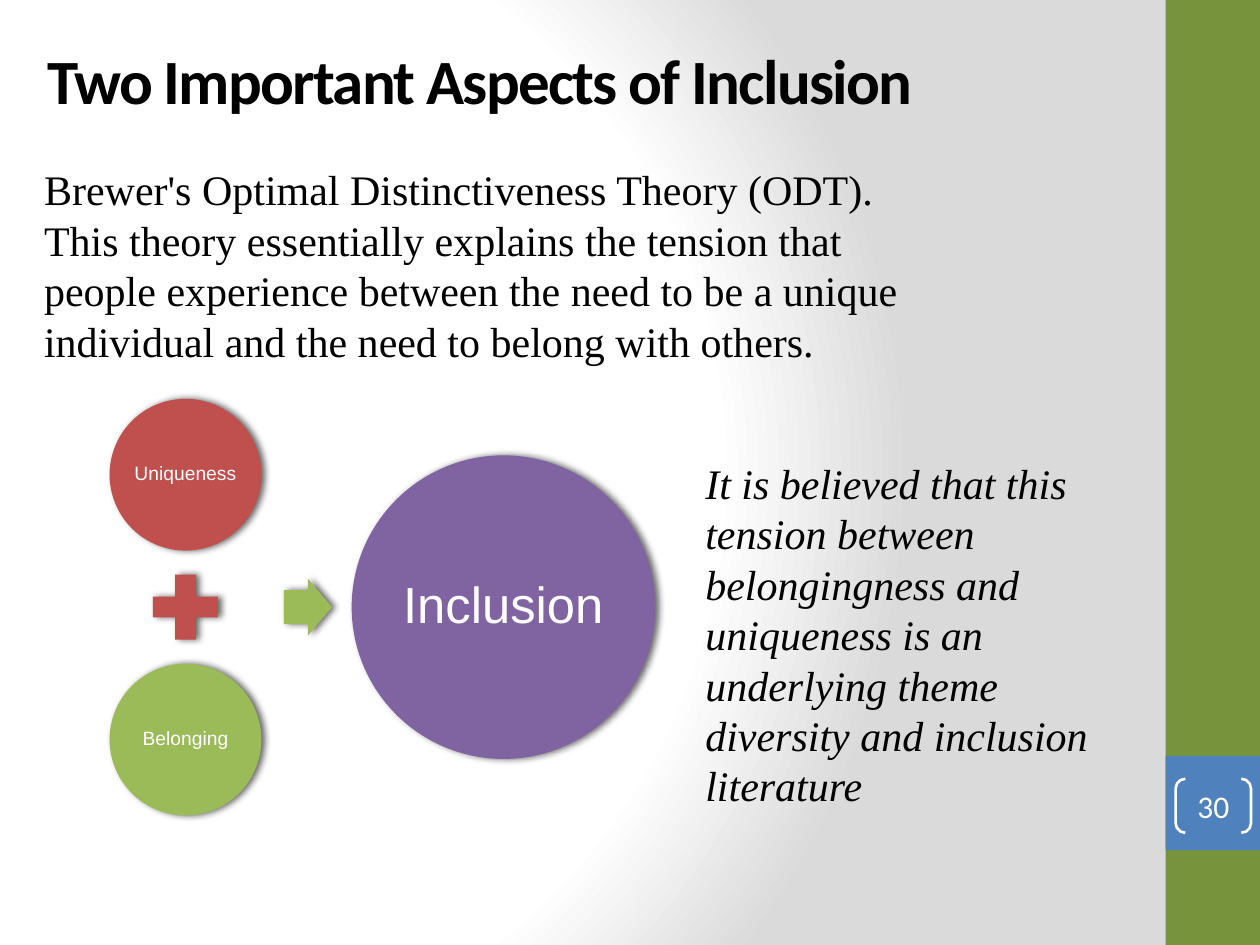
"""Build the slide on the two aspects of inclusion."""
import lxml.etree
import pptx
import pptx.dml.color
import pptx.enum.shapes
import pptx.enum.text
import pptx.oxml
import pptx.oxml.ns
import pptx.util

Cm = pptx.util.Cm
Pt = pptx.util.Pt
RGBColor = pptx.dml.color.RGBColor
SHAPE = pptx.enum.shapes.MSO_SHAPE
MIDDLE = pptx.enum.text.MSO_ANCHOR.MIDDLE
CENTER = pptx.enum.text.PP_ALIGN.CENTER
qn = pptx.oxml.ns.qn

BLACK = RGBColor(0x00, 0x00, 0x00)
WHITE = RGBColor(0xFF, 0xFF, 0xFF)
BAND_GREEN = RGBColor(0x77, 0x93, 0x3C)
BLUE = RGBColor(0x4F, 0x81, 0xBD)
RED = RGBColor(0xC0, 0x50, 0x4D)
GREEN = RGBColor(0x9B, 0xBB, 0x59)
PURPLE = RGBColor(0x80, 0x64, 0xA2)

NS = 'xmlns:a="http://schemas.openxmlformats.org/drawingml/2006/main"'
GRADIENT = f"""<a:gradFill {NS} rotWithShape="1"><a:gsLst>
<a:gs pos="0"><a:srgbClr val="FFFFFF"/></a:gs>
<a:gs pos="75000"><a:srgbClr val="FFFFFF"/></a:gs>
<a:gs pos="100000"><a:srgbClr val="DADADA"/></a:gs></a:gsLst>
<a:path path="circle"><a:fillToRect l="20000" t="50000" r="100000" b="50000"/></a:path>
</a:gradFill>"""
SHADOW = f"""<a:outerShdw {NS} blurRad="50800" dist="25400" dir="0" rotWithShape="0">
<a:srgbClr val="000000"><a:alpha val="60000"/></a:srgbClr></a:outerShdw>"""


def add_filled(kind, left, top, width, height, color):
    shape = slide.shapes.add_shape(kind, Cm(left), Cm(top), Cm(width), Cm(height))
    shape.shadow.inherit = False
    shape.line.fill.background()
    if color is None:
        shape.fill.background()
    else:
        shape.fill.solid()
        shape.fill.fore_color.rgb = color
    return shape


def write(shape, text, font, size, color, inset=None):
    frame = shape.text_frame
    frame.word_wrap = inset is None
    paragraph = frame.paragraphs[0]
    paragraph.text = text
    paragraph.font.name = font
    paragraph.font.size = Pt(size)
    paragraph.font.color.rgb = color
    if inset is not None:
        frame.vertical_anchor = MIDDLE
        frame.margin_left = frame.margin_right = Cm(inset)
        frame.margin_top = frame.margin_bottom = Cm(inset)
        paragraph.alignment = CENTER
    return paragraph


deck = pptx.Presentation()
deck.slide_width = Cm(25.4)
deck.slide_height = Cm(19.05)
slide = deck.slides.add_slide(deck.slide_layouts[6])

slide.background.fill.solid()
solid = slide.element.find(".//" + qn("p:bgPr")).find(qn("a:solidFill"))
solid.getparent().replace(solid, pptx.oxml.parse_xml(GRADIENT))

add_filled(SHAPE.RECTANGLE, 23.5, 0, 1.9, 19.05, BAND_GREEN)
add_filled(SHAPE.RECTANGLE, 23.5, 15.24, 1.9, 1.9, BLUE)

title = slide.shapes.add_textbox(Cm(0), Cm(0), Cm(24.94), Cm(3.18))
heading = write(title, "Two Important Aspects of Inclusion", "Calibri", 36, BLACK)
heading.font.bold = True
heading.runs[0].font.bold = True
heading.runs[0].font._element.set("spc", "-100")
title.text_frame.vertical_anchor = MIDDLE
title.text_frame.margin_left = Cm(0.95)

page_number = add_filled(SHAPE.DOUBLE_BRACKET, 23.7, 15.7, 1.52, 1.09, None)
page_number.adjustments[0] = 0.18
page_number.line.color.rgb = WHITE
page_number.line.width = Pt(1.5)
write(page_number, "30", "Calibri", 18, WHITE, 0)

middle = 12.24
pitch = 2.67
diagram = [
    (SHAPE.OVAL, 3.74, middle - pitch, 3.06, 3.06, RED, "Uniqueness", 11, 0.05),
    (SHAPE.MATH_PLUS, 3.74, middle, 1.78, 1.78, RED, None, None, None),
    (SHAPE.OVAL, 3.74, middle + pitch, 3.06, 3.06, GREEN, "Belonging", 11, 0.05),
    (SHAPE.RIGHT_ARROW, 6.21, middle, 0.97, 1.14, GREEN, None, None, None),
    (SHAPE.OVAL, 10.15, middle, 6.12, 6.12, PURPLE, "Inclusion", 29, 0.1),
]
for kind, x, y, width, height, color, label, size, inset in diagram:
    part = add_filled(kind, x - width / 2, y - height / 2, width, height, color)
    part._element.spPr.find(qn("a:effectLst")).append(pptx.oxml.parse_xml(SHADOW))
    if kind == SHAPE.RIGHT_ARROW:
        part.adjustments[0] = 0.6
    if label:
        write(part, label, "Arial", size, WHITE, inset).line_spacing = 0.9

theory = slide.shapes.add_textbox(Cm(0.64), Cm(3.18), Cm(18.2), Cm(4.37))
write(
    theory,
    "Brewer's Optimal Distinctiveness Theory (ODT). This theory essentially explains "
    "the tension that people experience between the need to be a unique individual "
    "and the need to belong with others.",
    "Times New Roman", 24, BLACK,
)

belief = slide.shapes.add_textbox(Cm(13.97), Cm(9.1), Cm(8.89), Cm(7.44))
write(
    belief,
    "It is believed that this tension between belongingness and uniqueness is an "
    "underlying theme diversity and inclusion literature",
    "Times New Roman", 24, BLACK,
).font.italic = True

deck.save("out.pptx")
